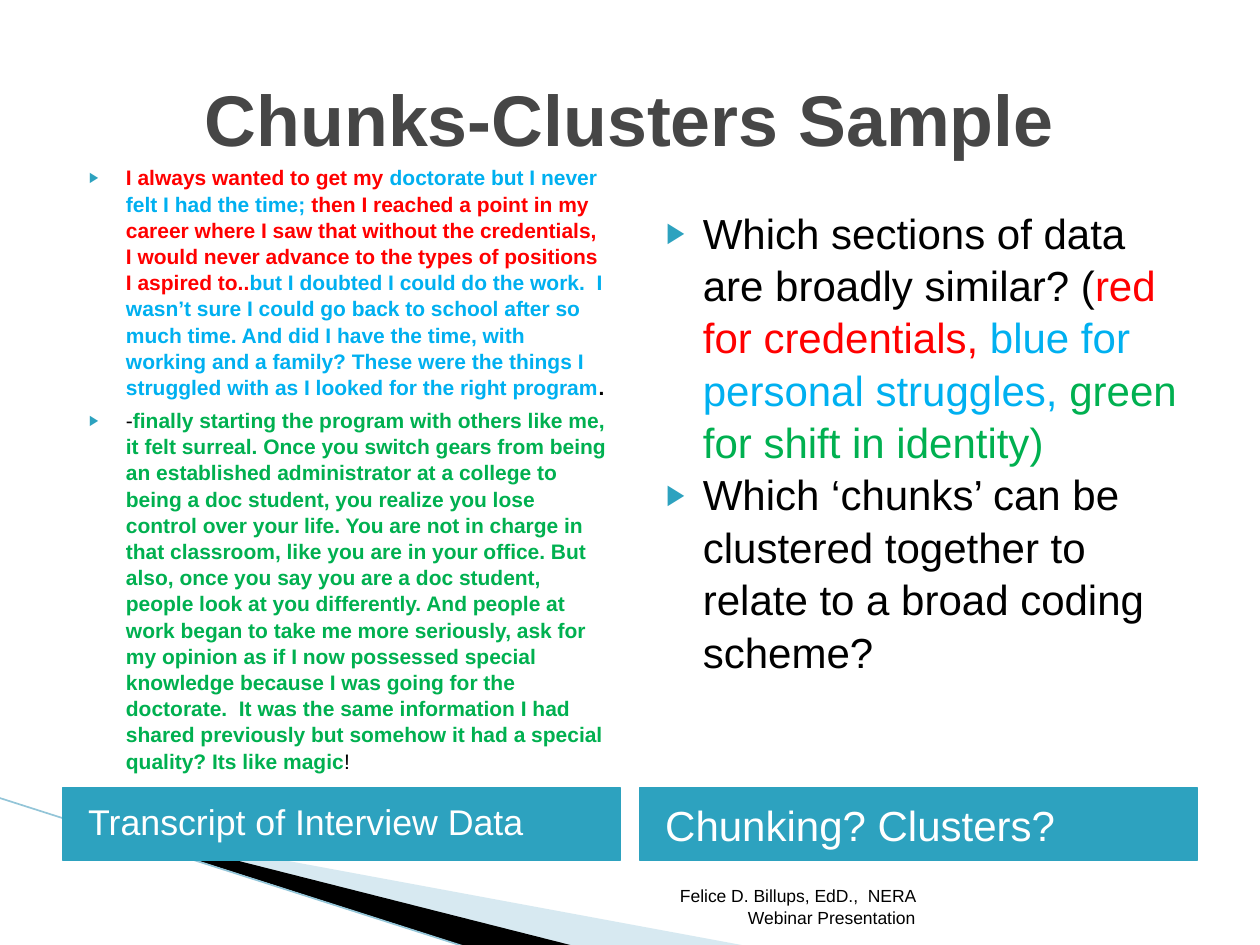
import pptx
import pptx.util
import pptx.dml.color
import pptx.enum.shapes
import pptx.enum.text
import pptx.oxml.ns
from lxml import etree

Cm = pptx.util.Cm
Pt = pptx.util.Pt
qn = pptx.oxml.ns.qn
ALIGN = pptx.enum.text.PP_ALIGN
ANCHOR = pptx.enum.text.MSO_ANCHOR
FONT = "Arial"
HEX = {
    "teal": "2DA2BF", "pale": "9CCADC", "edge": "93C5D8", "title": "464646",
    "black": "000000", "white": "FFFFFF", "red": "FF0000", "blue": "00B0F0",
    "green": "00B050",
}


def tint(name):
    return pptx.dml.color.RGBColor.from_string(HEX[name])


def write(para, text, size=12, color="black", bold=False):
    run = para.add_run()
    run.text = text
    run.font.name = FONT
    run.font.size = Pt(size)
    run.font.bold = bold
    run.font.color.rgb = tint(color)


def bullet(para):
    props = para._p.get_or_add_pPr()
    props.set("marL", str(Cm(1.02)))
    props.set("indent", str(-Cm(0.74)))
    shade = etree.SubElement(props, qn("a:buClr"))
    etree.SubElement(shade, qn("a:srgbClr"), val=HEX["teal"])
    etree.SubElement(props, qn("a:buSzPct"), val="68000")
    etree.SubElement(props, qn("a:buFont"), typeface=FONT)
    etree.SubElement(props, qn("a:buChar"), char="▶")


class Page:
    def __init__(self, deck):
        self.slide = deck.slides.add_slide(deck.slide_layouts[6])
        self.shapes = self.slide.shapes
        self.lead = 1.04

    def wedge(self, points, color, alpha=None):
        start, *rest = [(Cm(x), Cm(y)) for x, y in points]
        form = self.shapes.build_freeform(*start)
        form.add_line_segments(rest)
        shape = form.convert_to_shape()
        shape.shadow.inherit = False
        shape.fill.solid()
        shape.fill.fore_color.rgb = tint(color)
        shape.line.fill.background()
        if alpha:
            shade = shape._element.spPr.find(".//" + qn("a:srgbClr"))
            etree.SubElement(shade, qn("a:alpha"), val=str(alpha * 1000))

    def rule(self, start, end, color, width):
        kind = pptx.enum.shapes.MSO_CONNECTOR.STRAIGHT
        line = self.shapes.add_connector(kind, *map(Cm, start + end))
        line.line.color.rgb = tint(color)
        line.line.width = Pt(width)
        etree.SubElement(line._element.spPr, qn("a:effectLst"))

    def fill(self, shape, paras, size, anchor, align=ALIGN.LEFT, lead=None,
             gap=0, marks=False, bold=False):
        frame = shape.text_frame
        frame.word_wrap = True
        frame.vertical_anchor = anchor
        for i, runs in enumerate(paras):
            para = frame.add_paragraph() if i else frame.paragraphs[0]
            para.alignment = align
            para.line_spacing = lead or self.lead
            if i:
                para.space_before = Pt(gap)
            if marks:
                bullet(para)
            for text, color, *heavy in runs:
                write(para, text, size=size, color=color,
                      bold=heavy[0] if heavy else bold)

    def text(self, box, paras, size, anchor=ANCHOR.TOP, **style):
        shape = self.shapes.add_textbox(*map(Cm, box))
        self.fill(shape, paras, size, anchor, **style)

    def band(self, box, label, size, lead=None):
        kind = pptx.enum.shapes.MSO_SHAPE.RECTANGLE
        shape = self.shapes.add_shape(kind, *map(Cm, box))
        shape.shadow.inherit = False
        shape.fill.solid()
        shape.fill.fore_color.rgb = tint("teal")
        shape.line.color.rgb = tint("teal")
        shape.line.width = Pt(0.75)
        shape.text_frame.margin_left = Cm(0.51)
        self.fill(shape, [[(label, "white")]], size, ANCHOR.MIDDLE, lead=lead)


STORY = [
    [
        ("I always wanted to get my ", "red"),
        ("doctorate but I never felt I had the time; ", "blue"),
        ("then I reached a point in my career where I saw that without the "
         "credentials, I would never advance to the types of positions I "
         "aspired to..", "red"),
        ("but I doubted I could do the work.  I wasn’t sure I could go back "
         "to school after so much time. And did I have the time, with working "
         "and a family? These were the things I struggled with as I looked "
         "for the right program", "blue"),
        (".", "black"),
    ],
    [
        ("-", "black", False),
        ("finally starting the program with others like me, it felt surreal. "
         "Once you switch gears from being an established administrator at a "
         "college to being a doc student, you realize you lose control over "
         "your life. You are not in charge in that classroom, like you are in "
         "your office. But also, once you say you are a doc student, people "
         "look at you differently. And people at work began to take me more "
         "seriously, ask for my opinion as if I now possessed special "
         "knowledge because I was going for the doctorate.  It was the same "
         "information I had shared previously but somehow it had a special "
         "quality? Its like magic", "green"),
        ("!", "black", False),
    ],
]
TASKS = [
    [
        ("Which sections of data are broadly similar? (", "black"),
        ("red for credentials, ", "red"),
        ("blue for personal struggles, ", "blue"),
        ("green for shift in identity)", "green"),
    ],
    [("Which ‘chunks’ can be clustered together to relate to a broad coding "
      "scheme?", "black")],
]


def main():
    deck = pptx.Presentation()
    deck.slide_width, deck.slide_height = Cm(25.4), Cm(19.05)
    page = Page(deck)
    left, right, wide = 1.27, 12.9, 11.23

    page.wedge([(1.4, 16.54), (15.11, 19.08), (11.58, 19.08), (1.4, 16.51)],
               "pale", alpha=40)
    page.wedge([(1.35, 16.48), (11.61, 19.08), (9.45, 19.1), (1.37, 16.51)],
               "black")
    page.rule((-0.03, 16.08), (9.42, 19.1), "edge", 0.95)

    page.text((left, 0.76, 22.86, 3.18),
              [[("Chunks-Clusters Sample", "title")]], 41,
              anchor=ANCHOR.MIDDLE, align=ALIGN.CENTER, bold=True)
    page.band((left, 15.88, wide, 1.47), "Transcript of Interview Data", 20.4,
              lead=0.9)
    page.band((right, 15.88, wide, 1.47), "Chunking? Clusters?", 24)
    page.text((left, 3.18, wide, 12.5), STORY, 12, gap=4, marks=True,
              bold=True)
    page.text((right, 4.01, wide, 10.95), TASKS, 24, marks=True)
    page.text((12.17, 17.81, 6.53, 1.02),
              [[("Felice D. Billups, EdD.,  NERA Webinar Presentation",
                 "black")]], 10, anchor=ANCHOR.BOTTOM, align=ALIGN.RIGHT)
    deck.save("out.pptx")


if __name__ == "__main__":
    main()
